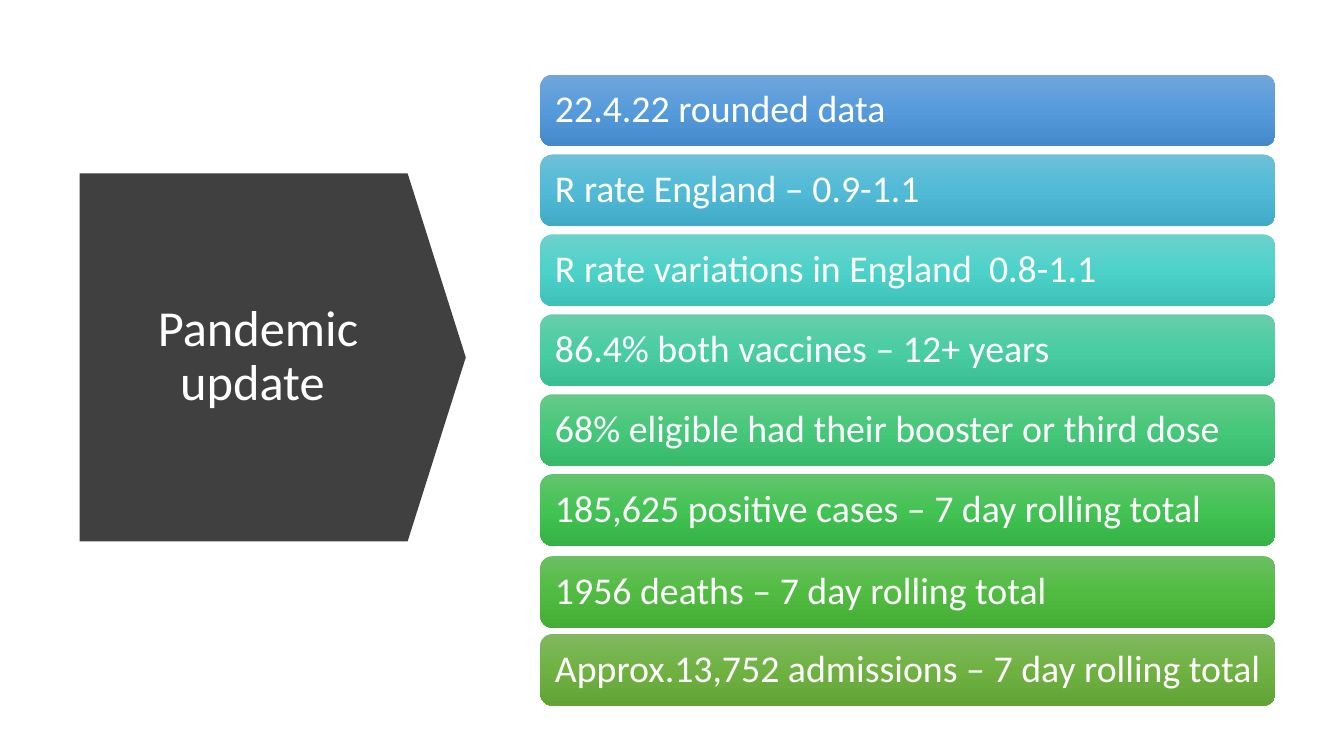
from copy import deepcopy

from pptx import Presentation
from pptx.dml.color import RGBColor
from pptx.enum.shapes import MSO_SHAPE
from pptx.enum.text import MSO_ANCHOR, PP_ALIGN
from pptx.oxml.ns import qn
from pptx.util import Inches, Pt

TITLE = "Pandemic update "
FACTS = [
    ("22.4.22 rounded data", "71A6DB", "559BDB", "448ACA"),
    ("R rate England – 0.9-1.1", "6EBFD7", "51BBD7", "41AAC6"),
    ("R rate variations in England  0.8-1.1", "6BD2CC", "4DD2CA", "3DC1B9"),
    ("86.4% both vaccines – 12+ years", "68CEAA", "49CDA2", "3ABD92"),
    ("68% eligible had their booster or third dose", "66C98A", "46C87A", "37B86B"),
    ("185,625 positive cases – 7 day rolling total", "64C46F", "43C354", "35B346"),
    ("1956 deaths – 7 day rolling total", "6CBF62", "51BC41", "45AC35"),
    ("Approx.13,752 admissions – 7 day rolling total", "81B861", "6FB242", "62A336"),
]
LOWERED = {6: 0.02}

WHITE = RGBColor(0xFF, 0xFF, 0xFF)
CHARCOAL = RGBColor(0x40, 0x40, 0x40)
FONT = "Calibri"
DOWN_ARROW = MSO_SHAPE.DOWN_ARROW
ROUNDED = MSO_SHAPE.ROUNDED_RECTANGLE
MIDDLE = MSO_ANCHOR.MIDDLE
LEFT, CENTER = PP_ALIGN.LEFT, PP_ALIGN.CENTER

BAR_LEFT, BAR_WIDTH, BAR_HEIGHT = 5.36, 7.29, 0.71
FIRST_TOP, LAST_TOP = 0.74, 6.29
BAR_INSET = 0.11


def write(box, text, size, align):
    frame = box.text_frame
    frame.word_wrap = True
    frame.vertical_anchor = MIDDLE
    para = frame.paragraphs[0]
    para.alignment = align
    para.line_spacing = 0.9
    span = para.add_run()
    span.text = text
    span.font.name = FONT
    span.font.size = Pt(size)
    span.font.color.rgb = WHITE


def add_plain_shape(page, kind, left, top, width, height):
    shape = page.shapes.add_shape(
        kind, Inches(left), Inches(top), Inches(width), Inches(height))
    shape.shadow.inherit = False
    shape.line.fill.background()
    return shape


def fill_gradient(shape, colours):
    fill = shape.fill
    fill.gradient()
    fill.gradient_angle = 270
    first_stop = next(shape.element.iter(qn("a:gs")))
    first_stop.addnext(deepcopy(first_stop))
    for stop, colour, position in zip(fill.gradient_stops, colours, (0, 0.5, 1)):
        stop.color.rgb = RGBColor.from_string(colour)
        stop.position = position


def add_title(page):
    arrow = add_plain_shape(page, DOWN_ARROW, 0.88, 1.63, 3.65, 3.83)
    arrow.rotation = 270
    arrow.adjustments[0] = 1
    arrow.adjustments[1] = 0.158
    arrow.fill.solid()
    arrow.fill.fore_color.rgb = CHARCOAL

    title = page.shapes.title
    title.left, title.top = Inches(1.12), Inches(2.15)
    title.width, title.height = Inches(2.88), Inches(2.79)
    write(title, TITLE, 36, CENTER)
    arrow.element.addnext(title.element)


def add_facts(page):
    pitch = (LAST_TOP - FIRST_TOP) / (len(FACTS) - 1)
    for index, (text, *colours) in enumerate(FACTS):
        top = FIRST_TOP + index * pitch + LOWERED.get(index, 0)
        bar = add_plain_shape(page, ROUNDED, BAR_LEFT, top, BAR_WIDTH, BAR_HEIGHT)
        fill_gradient(bar, colours)
        frame = bar.text_frame
        frame.margin_left = frame.margin_right = Inches(BAR_INSET)
        frame.margin_top = frame.margin_bottom = Inches(BAR_INSET)
        write(bar, text, 27, LEFT)


def main():
    """Build the pandemic update slide."""
    deck = Presentation()
    deck.slide_width, deck.slide_height = Inches(13.33), Inches(7.5)
    page = deck.slides.add_slide(deck.slide_layouts[5])
    add_title(page)
    add_facts(page)
    deck.save("out.pptx")


if __name__ == "__main__":
    main()
